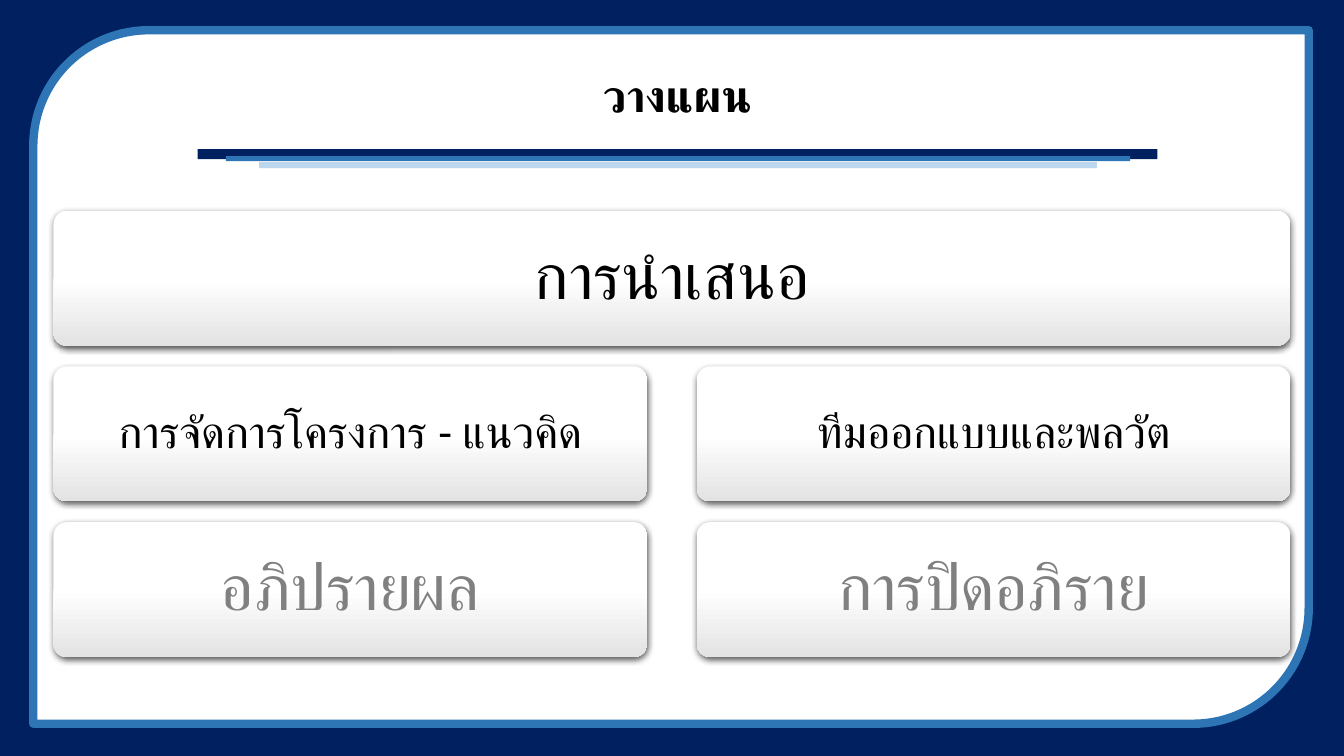
from copy import deepcopy
from dataclasses import dataclass

from lxml import etree
from pptx import Presentation
from pptx.dml.color import RGBColor
from pptx.enum import shapes, text
from pptx.oxml.ns import qn
from pptx.util import Inches, Pt

TITLE = "วางแผน"
# Each row of the agenda: (label, size key, colour key)
AGENDA = [
    [("การนำเสนอ", "large", "ink")],
    [("การจัดการโครงการ - แนวคิด", "small", "ink"),
     ("ทีมออกแบบและพลวัต", "small", "ink")],
    [("อภิปรายผล", "large", "muted"), ("การปิดอภิราย", "large", "muted")],
]
# Title rules: (left, top, width, height, colour key)
RULES = [
    (1.96, 1.48, 9.52, 0.10, "navy"),
    (2.24, 1.55, 8.97, 0.05, "blue"),
    (2.57, 1.61, 8.31, 0.06, "pale"),
]


@dataclass(frozen=True)
class Theme:
    navy: str = "002060"
    blue: str = "2E75B6"
    pale: str = "BDD7EE"
    white: str = "FFFFFF"
    tile_foot: str = "E3E3E3"
    ink: str = "000000"
    muted: str = "808080"
    title_font: str = "Arial"
    body_font: str = "Calibri"
    small: int = 32
    large: int = 46


THEME = Theme()
PAGE_W, PAGE_H = 13.33, 7.5
GRID_LEFT, GRID_TOP, GRID_W = 0.53, 2.09, 12.27
TILE_H, ROW_PITCH, COLUMN_GAP = 1.34, 1.545, 0.49


def rgb(key):
    return RGBColor.from_string(getattr(THEME, key))


def add_panel(slide, kind, box, fill=None, line=None, line_width=6):
    panel = slide.shapes.add_shape(kind, *map(Inches, box))
    panel.shadow.inherit = False
    if fill:
        panel.fill.solid()
        panel.fill.fore_color.rgb = rgb(fill)
    if line:
        panel.line.color.rgb = rgb(line)
        panel.line.width = Pt(line_width)
    else:
        panel.line.fill.background()
    return panel


def write(shape, words, *, size, font, color="ink", bold=False, inset=0.1):
    frame = shape.text_frame
    frame.word_wrap = True
    frame.auto_size = text.MSO_AUTO_SIZE.NONE
    frame.vertical_anchor = text.MSO_ANCHOR.MIDDLE
    frame.margin_left = frame.margin_right = Inches(inset)
    frame.margin_top = frame.margin_bottom = Inches(inset)
    frame.text = words
    paragraph = frame.paragraphs[0]
    paragraph.alignment = text.PP_ALIGN.CENTER
    paragraph.line_spacing = 0.9
    style = paragraph.runs[0].font
    style.name, style.size, style.bold = font, Pt(size), bold
    style.color.rgb = rgb(color)


def shade_tile(tile):
    """Fade the lower half to grey and cast a soft shadow downwards."""
    tile.fill.gradient()
    tile.fill.gradient_angle = 270
    first, last = tile.fill.gradient_stops
    first.color.rgb, first.position = rgb("white"), 0
    last.color.rgb, last.position = rgb("tile_foot"), 1
    properties = tile._element.spPr
    top_stop = properties.find(".//" + qn("a:gs"))
    middle_stop = deepcopy(top_stop)
    middle_stop.set("pos", "50000")
    top_stop.addnext(middle_stop)

    shadow = etree.SubElement(
        properties.find(qn("a:effectLst")), qn("a:outerShdw"),
        blurRad=str(Pt(4.5)), dist=str(Pt(1.5)), dir="5400000",
        algn="ctr", rotWithShape="0")
    shadow_color = etree.SubElement(shadow, qn("a:srgbClr"), val=THEME.ink)
    etree.SubElement(shadow_color, qn("a:alpha"), val="63000")


def add_backdrop(slide):
    kinds = shapes.MSO_SHAPE
    add_panel(slide, kinds.RECTANGLE, (0, 0, PAGE_W, PAGE_H), "navy")
    add_panel(slide, kinds.ROUND_2_DIAG_RECTANGLE, (0.33, 0.3, 12.65, 6.88),
              "white", line="blue")
    for *box, color in RULES:
        add_panel(slide, kinds.RECTANGLE, box, color)


def add_title(slide):
    title = slide.shapes.title
    title.left, title.top = Inches(1.96), Inches(0.49)
    title.width, title.height = Inches(9.52), Inches(0.97)
    write(title, TITLE, size=THEME.small, font=THEME.title_font, bold=True)
    slide.shapes._spTree.append(title._element)  # bring in front of the frame


def add_agenda(slide):
    for row, entries in enumerate(AGENDA):
        count = len(entries)
        width = (GRID_W - COLUMN_GAP * (count - 1)) / count
        for column, (label, size, color) in enumerate(entries):
            box = (GRID_LEFT + column * (width + COLUMN_GAP),
                   GRID_TOP + row * ROW_PITCH, width, TILE_H)
            tile = add_panel(slide, shapes.MSO_SHAPE.ROUNDED_RECTANGLE, box)
            tile.adjustments[0] = 0.1
            shade_tile(tile)
            write(tile, label, size=getattr(THEME, size), color=color,
                  font=THEME.body_font, inset=0.19 if size == "large" else 0.13)


def main():
    deck = Presentation()
    deck.slide_width, deck.slide_height = Inches(PAGE_W), Inches(PAGE_H)
    slide = deck.slides.add_slide(deck.slide_layouts[5])
    add_backdrop(slide)
    add_title(slide)
    add_agenda(slide)
    deck.save("out.pptx")


if __name__ == "__main__":
    main()
